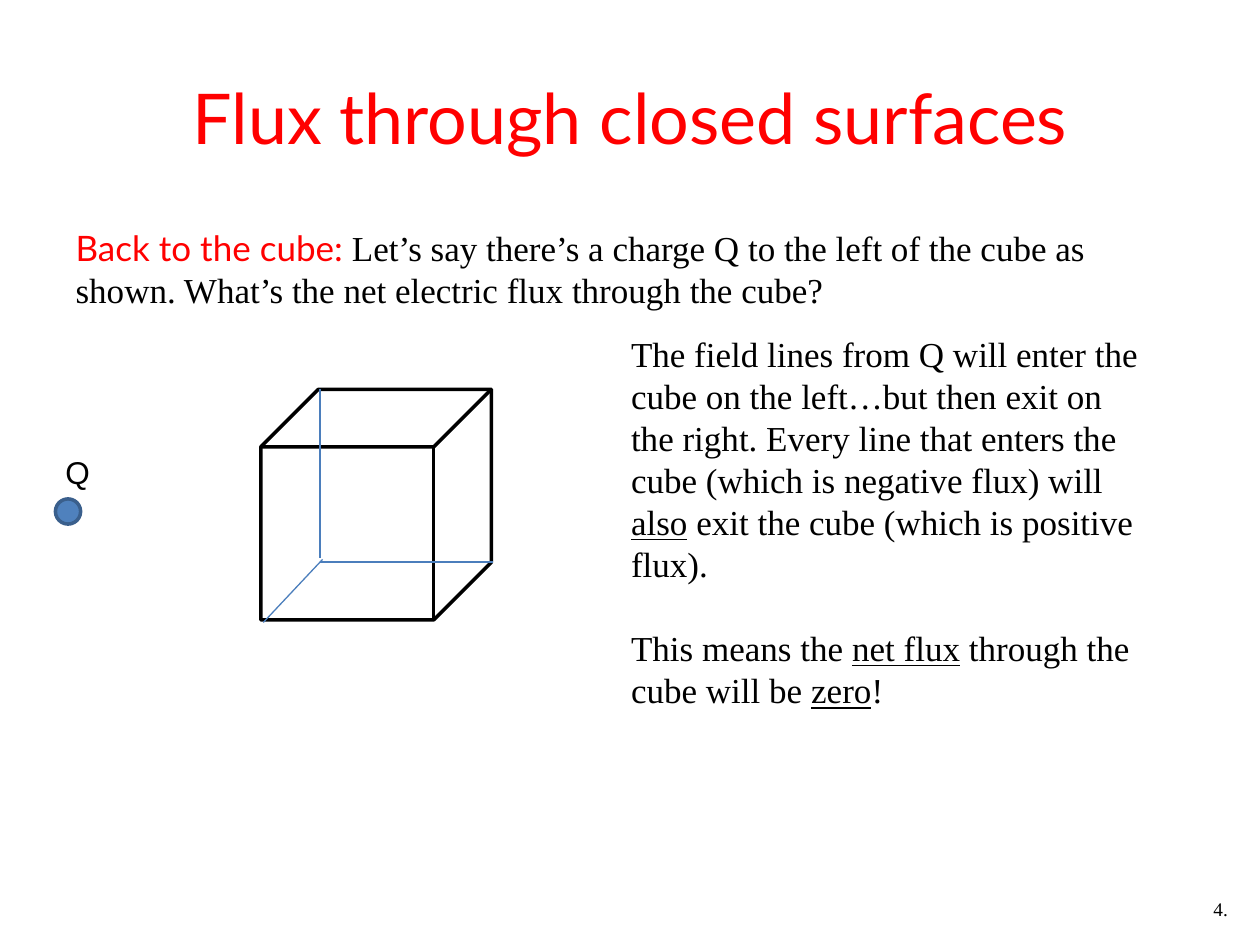
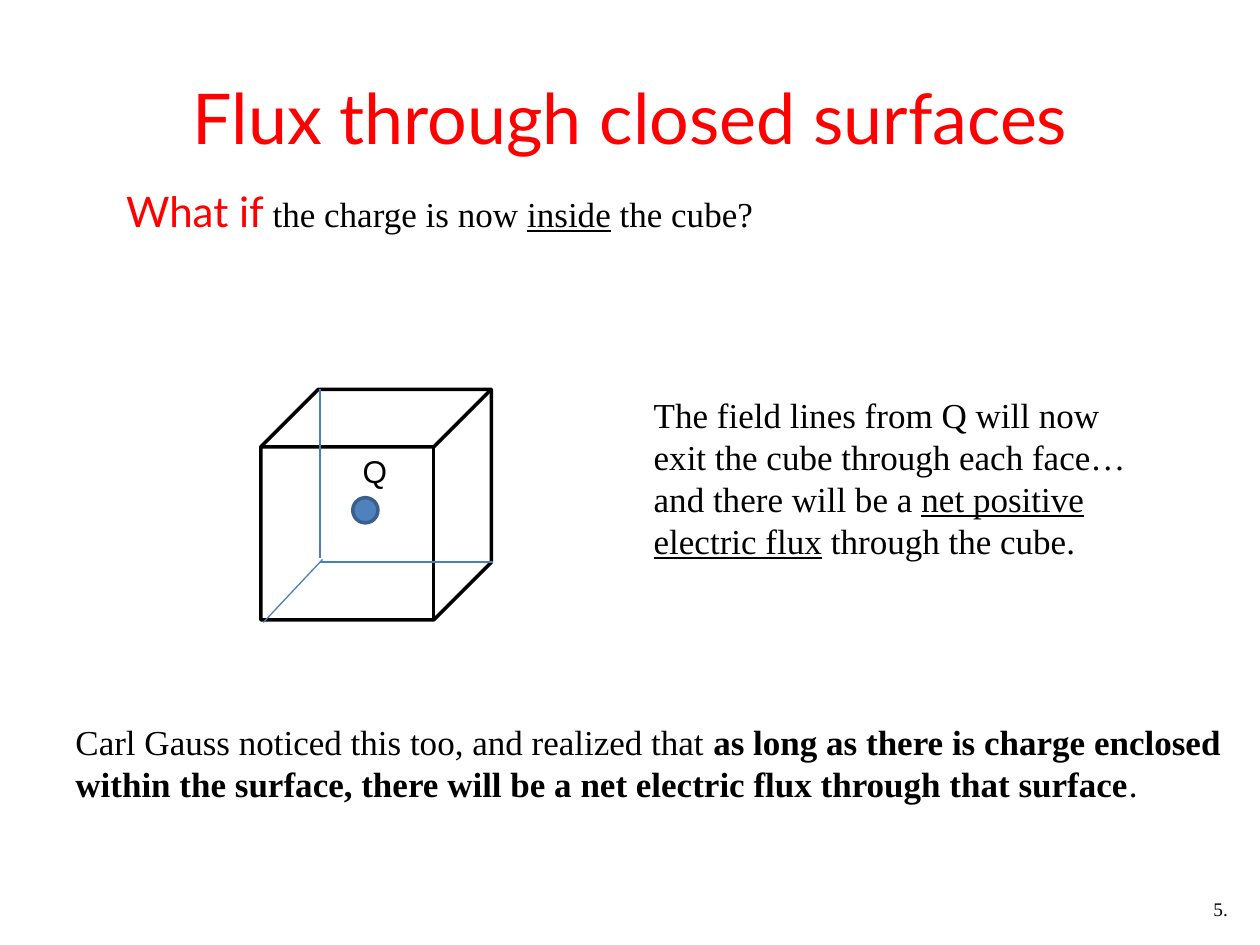
from dataclasses import dataclass
from typing import NamedTuple

from lxml.etree import SubElement
from pptx import Presentation
from pptx.dml.color import RGBColor
from pptx.enum.shapes import MSO_CONNECTOR, MSO_SHAPE
from pptx.enum.text import MSO_ANCHOR, MSO_AUTO_SIZE, PP_ALIGN
from pptx.oxml.ns import qn
from pptx.util import Inches, Pt


@dataclass(frozen=True)
class Theme:
    red: RGBColor = RGBColor(0xFF, 0x00, 0x00)
    black: RGBColor = RGBColor(0x00, 0x00, 0x00)
    charge_fill: RGBColor = RGBColor(0x4F, 0x81, 0xBD)
    charge_line: RGBColor = RGBColor(0x3A, 0x5F, 0x8C)
    hidden_edge: RGBColor = RGBColor(0x4B, 0x7E, 0xBC)
    heading_font: str = "Lato"
    text_font: str = "Times New Roman"
    label_font: str = "Arial"
    title_size: float = 40
    lead_size: float = 24
    text_size: float = 20
    label_size: float = 18
    number_size: float = 11
    paragraph_gap: float = 24
    outline: float = 2
    thin: float = 0.75


THEME = Theme()


class Span(NamedTuple):
    text: str
    font: str = THEME.text_font
    size: float = THEME.text_size
    color: RGBColor = THEME.black
    underline: bool = False
    bold: bool = False


class Area(NamedTuple):
    left: float
    top: float
    width: float
    height: float


class Note(NamedTuple):
    area: Area
    paragraphs: list[list[Span]]


class FluxPage(NamedTuple):
    number: str
    question_area: Area
    question: list[Span]
    charge: tuple[float, float]
    notes: list[Note]


TITLE = "Flux through closed surfaces"
TITLE_AREA = Area(0.5, 0.3, 9, 1.25)
NUMBER_AREA = Area(9.54, 7.08, 0.45, 0.28)
CUBE_AREA = Area(2.07, 3.09, 1.83, 1.83)
CHARGE_SIZE = 0.2
HIDDEN_EDGES = [
    ((2.54, 3.09), (2.54, 4.43)),
    ((2.09, 4.94), (2.56, 4.44)),
    ((2.54, 4.46), (3.91, 4.46)),
]

PAGES = [
    FluxPage(
        "4.",
        Area(0.5, 1.75, 9, 4.95),
        [
            Span("Back to the cube:", THEME.heading_font, color=THEME.red),
            Span(" Let’s say there’s a charge Q to the left of the cube as shown. "
                 "What’s the net electric flux through the cube?"),
        ],
        (0.44, 3.96),
        [Note(Area(4.91, 2.59, 4.32, 3.13), [
            [
                Span("The field lines from Q will enter the cube on the left…but then "
                     "exit on the right. Every line that enters the cube (which is "
                     "negative flux) will "),
                Span("also", underline=True),
                Span(" exit the cube (which is positive flux)."),
            ],
            [
                Span("This means the "),
                Span("net flux", underline=True),
                Span(" through the cube will be "),
                Span("zero", underline=True),
                Span("!"),
            ],
        ])],
    ),
    FluxPage(
        "5.",
        Area(0.9, 1.42, 8.25, 0.57),
        [
            Span("What if", THEME.heading_font, THEME.lead_size, THEME.red),
            Span(" the charge is now "),
            Span("inside", underline=True),
            Span(" the cube?"),
        ],
        (2.8, 3.95),
        [
            Note(Area(5.09, 3.07, 4.06, 1.78), [[
                Span("The field lines from Q will now exit the cube through each "
                     "face…and there will be a "),
                Span("net positive electric flux", underline=True),
                Span(" through the cube."),
            ]]),
            Note(Area(0.5, 5.67, 9.41, 0.77), [[
                Span("Carl Gauss noticed this too, and realized that "),
                Span("as long as there is charge enclosed within the surface, there "
                     "will be a net electric flux through that surface", bold=True),
                Span("."),
            ]]),
        ],
    ),
]


def inches(area: Area) -> list[int]:
    return [Inches(value) for value in area]


def add_spans(para, spans: list[Span]) -> None:
    for span in spans:
        run = para.add_run()
        run.text = span.text
        font = run.font
        font.name, font.size = span.font, Pt(span.size)
        font.color.rgb = span.color
        if span.underline:
            font.underline = True
        if span.bold:
            font.bold = True


def fill_placeholder(holder, area: Area, spans: list[Span]):
    """Move a placeholder and give it one paragraph."""
    holder.left, holder.top, holder.width, holder.height = inches(area)
    holder.text_frame.auto_size = MSO_AUTO_SIZE.NONE
    para = holder.text_frame.paragraphs[0]
    add_spans(para, spans)
    return para


def add_text(page, area: Area, paragraphs: list[list[Span]], wrap: bool = True):
    box = page.shapes.add_textbox(*inches(area))
    frame = box.text_frame
    frame.word_wrap = wrap
    frame.auto_size = MSO_AUTO_SIZE.SHAPE_TO_FIT_TEXT
    for index, spans in enumerate(paragraphs):
        para = frame.add_paragraph() if index else frame.paragraphs[0]
        if index:
            para.space_before = Pt(THEME.paragraph_gap)
        add_spans(para, spans)
    return frame


def add_title(page) -> None:
    span = Span(TITLE, THEME.heading_font, THEME.title_size, THEME.red)
    fill_placeholder(page.shapes.title, TITLE_AREA, [span]).alignment = PP_ALIGN.CENTER
    page.shapes.title.text_frame.vertical_anchor = MSO_ANCHOR.MIDDLE


def add_question(page, area: Area, spans: list[Span]) -> None:
    para = fill_placeholder(page.placeholders[1], area, spans)
    properties = para._p.get_or_add_pPr()
    properties.set("marL", "0")
    properties.set("indent", "0")
    SubElement(properties, qn("a:buNone"))


def add_charge(page, left: float, top: float) -> None:
    charge = page.shapes.add_shape(
        MSO_SHAPE.OVAL, *inches(Area(left, top, CHARGE_SIZE, CHARGE_SIZE)))
    charge.shadow.inherit = False
    charge.fill.solid()
    charge.fill.fore_color.rgb = THEME.charge_fill
    charge.line.color.rgb = THEME.charge_line
    charge.line.width = Pt(THEME.outline)
    label = Span("Q", THEME.label_font, THEME.label_size)
    add_text(page, Area(left - 0.02, top - 0.41, 0.97, 0.4), [[label]])


def add_cube(page) -> None:
    cube = page.shapes.add_shape(MSO_SHAPE.CUBE, *inches(CUBE_AREA))
    cube.shadow.inherit = False
    cube.fill.background()
    cube.line.color.rgb = THEME.black
    cube.line.width = Pt(THEME.outline)
    for start, end in HIDDEN_EDGES:
        edge = page.shapes.add_connector(
            MSO_CONNECTOR.STRAIGHT, *[Inches(value) for value in start + end])
        edge.line.color.rgb = THEME.hidden_edge
        edge.line.width = Pt(THEME.thin)
        SubElement(edge._element.spPr, qn("a:effectLst"))


def add_number(page, number: str) -> None:
    span = Span(number, size=THEME.number_size)
    frame = add_text(page, NUMBER_AREA, [[span]], wrap=False)
    frame.margin_left = frame.margin_right = Inches(0.09)
    frame.margin_top = frame.margin_bottom = Inches(0.04)


def build_page(deck, content: FluxPage) -> None:
    page = deck.slides.add_slide(deck.slide_layouts[1])
    add_title(page)
    add_question(page, content.question_area, content.question)
    # Diagram
    add_charge(page, *content.charge)
    add_cube(page)
    # Explanations and page number
    for note in content.notes:
        add_text(page, note.area, note.paragraphs)
    add_number(page, content.number)


def main() -> None:
    deck = Presentation()
    deck.slide_width, deck.slide_height = Inches(10), Inches(7.5)
    for content in PAGES:
        build_page(deck, content)
    deck.save("out.pptx")


if __name__ == "__main__":
    main()
